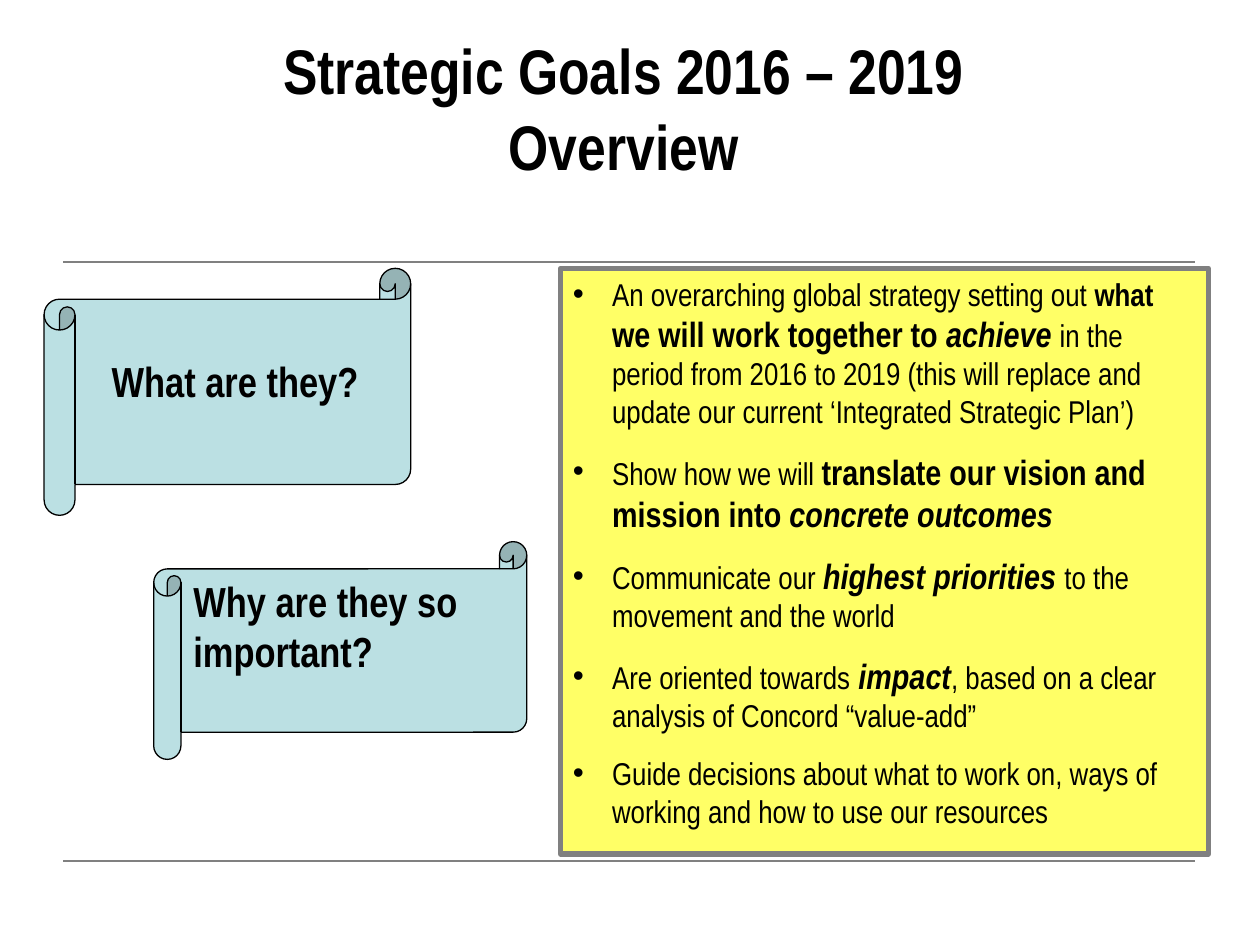
from lxml import etree
from pptx import Presentation
from pptx.dml.color import RGBColor
from pptx.enum import shapes, text
from pptx.oxml import ns
from pptx.util import Cm, Pt

FONT = "Arial Narrow"
BLACK, GREY, YELLOW, TEAL = "000000", "808080", "FFFF66", "BBE0E3"
PLAIN = (18, False, False)
STRONG = (20, True, False)
STRESSED = (20, True, True)

GOALS = [
    [
        ("An overarching global strategy setting out ", PLAIN),
        ("what ", (18, True, False)),
        ("we will work together to ", STRONG),
        ("achieve ", STRESSED),
        ("in the period from 2016 to 2019 (this will replace and update "
         "our current ‘Integrated Strategic Plan’)", PLAIN),
    ],
    [
        ("Show how we will ", PLAIN),
        ("translate our vision and mission into ", STRONG),
        ("concrete outcomes", STRESSED),
    ],
    [
        ("Communicate our ", PLAIN),
        ("highest priorities ", STRESSED),
        ("to the movement and the world", PLAIN),
    ],
    [
        ("Are oriented towards", PLAIN),
        (" impact", STRESSED),
        (", based on a clear analysis of Concord “value-add”", PLAIN),
    ],
    [("Guide decisions about what to work on, ways of working and how to "
      "use our resources", PLAIN)],
]


def color(value):
    return RGBColor.from_string(value)


def add_span(para, words, style):
    span = para.add_run()
    span.text = words
    span.font.name = FONT
    span.font.color.rgb = color(BLACK)
    size, span.font.bold, span.font.italic = style
    span.font.size = Pt(size)


def add_panel(page, kind, box, fill, line, width):
    panel = page.shapes.add_shape(kind, *map(Cm, box))
    panel.shadow.inherit = False
    panel.fill.solid()
    panel.fill.fore_color.rgb = color(fill)
    panel.line.color.rgb = color(line)
    panel.line.width = Pt(width)
    panel.text_frame.word_wrap = True
    panel.text_frame.vertical_anchor = text.MSO_ANCHOR.TOP
    return panel


def add_rules(page, box):
    left, top, width, height = box
    for y in (top, top + height):
        rule = page.shapes.add_connector(
            shapes.MSO_CONNECTOR.STRAIGHT,
            Cm(left), Cm(y), Cm(left + width), Cm(y))
        rule.line.color.rgb = color(GREY)
        rule.line.width = Pt(1)
        etree.SubElement(rule._element.spPr, ns.qn("a:effectLst"))


def add_title(page, box, lines):
    frame = page.shapes.add_textbox(*map(Cm, box)).text_frame
    frame.word_wrap = True
    frame.margin_left = frame.margin_right = 0
    frame.margin_top = frame.margin_bottom = 0
    para = frame.paragraphs[0]
    para.alignment = text.PP_ALIGN.CENTER
    for index, words in enumerate(lines):
        if index:
            para.add_line_break()
        add_span(para, words, (36, True, False))


def add_goals(page, box, goals):
    panel = add_panel(page, shapes.MSO_SHAPE.RECTANGLE, box, YELLOW, GREY, 3)
    frame = panel.text_frame
    for index, goal in enumerate(goals):
        para = frame.add_paragraph() if index else frame.paragraphs[0]
        para.alignment = text.PP_ALIGN.LEFT
        if index:
            para.space_before = Pt(11.5)
        properties = para._p.get_or_add_pPr()
        properties.set("marL", str(Cm(0.79)))
        properties.set("indent", str(-Cm(0.79)))
        etree.SubElement(properties, ns.qn("a:buFont"), typeface="Arial")
        etree.SubElement(properties, ns.qn("a:buChar"), char="•")
        for words, style in goal:
            add_span(para, words, style)


def add_scroll(page, box, words, alignment, inset):
    scroll = add_panel(
        page, shapes.MSO_SHAPE.HORIZONTAL_SCROLL, box, TEAL, BLACK, 0.75)
    scroll.text_frame.margin_top = Cm(inset)
    para = scroll.text_frame.paragraphs[0]
    para.alignment = alignment
    add_span(para, words, (24, True, False))


def main():
    deck = Presentation()
    deck.slide_width, deck.slide_height = Cm(25.4), Cm(19.05)
    page = deck.slides.add_slide(deck.slide_layouts[6])
    add_rules(page, (1.27, 5.28, 22.81, 12.07))
    add_title(page, (1.27, 0.64, 22.6, 3.1),
              ["Strategic Goals 2016 – 2019", "Overview"])
    add_goals(page, (11.3, 5.41, 13.06, 11.81), GOALS)
    add_scroll(page, (0.89, 5.41, 7.39, 4.98), "What are they?",
               text.PP_ALIGN.CENTER, 1.13)
    add_scroll(page, (3.1, 10.92, 7.52, 4.39), "Why are they so important?",
               text.PP_ALIGN.LEFT, 0.13)
    deck.save("out.pptx")


if __name__ == "__main__":
    main()
